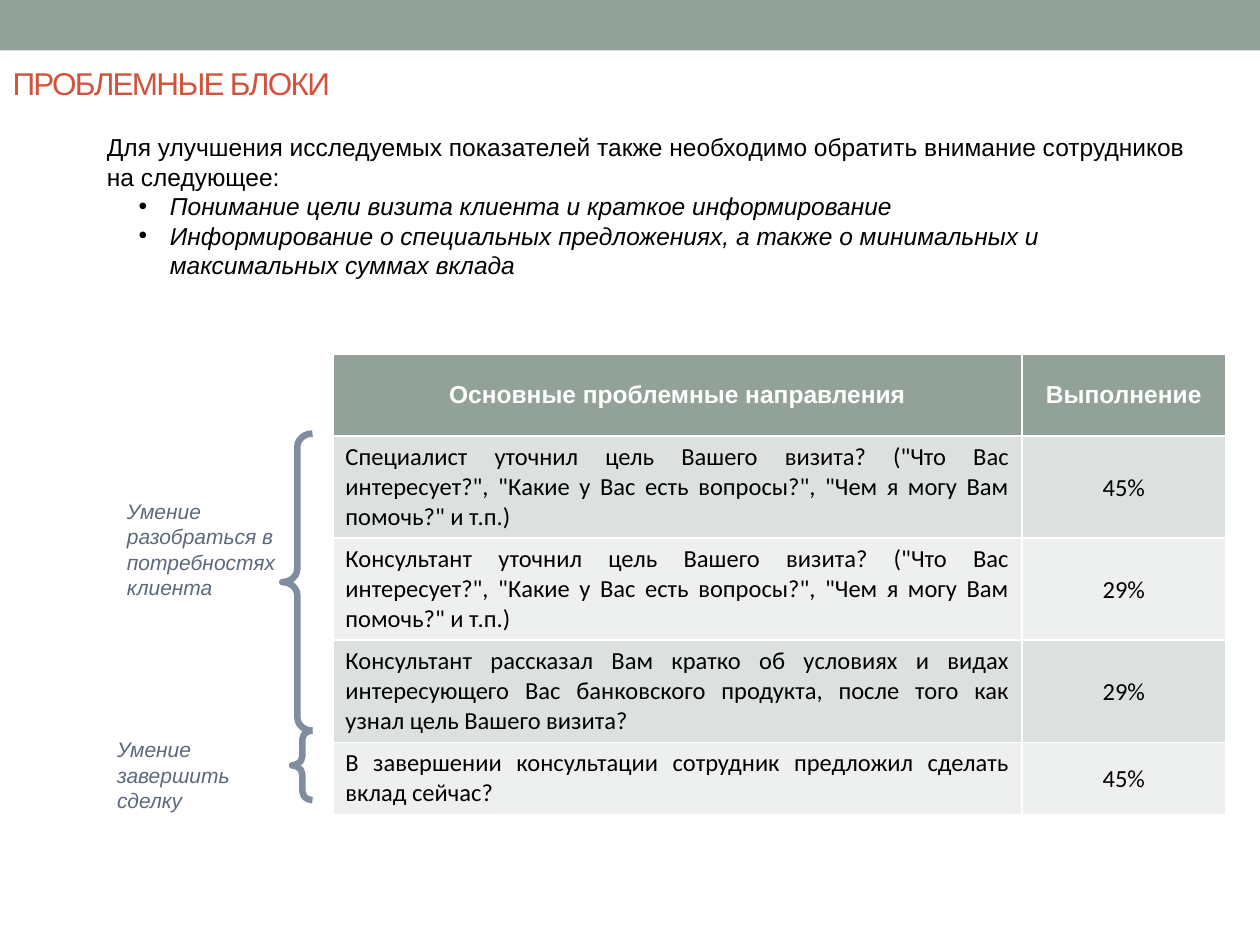
"""Builds the slide on problem areas with a results table and braced groups."""
from pptx import Presentation
from pptx.dml.color import RGBColor
from pptx.enum.shapes import MSO_SHAPE
from pptx.enum.text import MSO_ANCHOR, MSO_AUTO_SIZE, PP_ALIGN
from pptx.oxml.ns import qn
from pptx.util import Cm, Pt

LEFT, CENTER, JUSTIFY = PP_ALIGN.LEFT, PP_ALIGN.CENTER, PP_ALIGN.JUSTIFY
TOP, MIDDLE = MSO_ANCHOR.TOP, MSO_ANCHOR.MIDDLE
NO_FIT = MSO_AUTO_SIZE.NONE
RECTANGLE, LEFT_BRACE = MSO_SHAPE.RECTANGLE, MSO_SHAPE.LEFT_BRACE

SAGE = RGBColor(0x93, 0xA2, 0x99)
BANDS = (RGBColor(0xDC, 0xE0, 0xDE), RGBColor(0xEE, 0xF0, 0xEF))
RED = RGBColor(0xD2, 0x53, 0x3C)
BLACK = RGBColor(0, 0, 0)
WHITE = RGBColor(0xFF, 0xFF, 0xFF)
SLATE = RGBColor(0x5C, 0x69, 0x7C)
BRACE_BLUE = RGBColor(0x80, 0x8D, 0xA0)

HEADING = "ПРОБЛЕМНЫЕ БЛОКИ"
INTRO = ("Для улучшения исследуемых показателей также необходимо "
         "обратить внимание сотрудников на следующее:")
POINTS = [
    "Понимание цели визита клиента и краткое информирование",
    "Информирование о специальных предложениях, а также о минимальных "
    "и максимальных суммах вклада",
]
HEADERS = ("Основные проблемные направления", "Выполнение")
VISIT_QUESTIONS = ('уточнил цель Вашего визита? ("Что Вас интересует?", '
                   '"Какие у Вас есть вопросы?", "Чем я могу Вам помочь?" и т.п.)')
RESULTS = [
    (f"Специалист {VISIT_QUESTIONS}", "45%"),
    (f"Консультант {VISIT_QUESTIONS}", "29%"),
    ("Консультант рассказал Вам кратко об условиях и видах интересующего "
     "Вас банковского продукта, после того как узнал цель Вашего визита?", "29%"),
    ("В завершении консультации сотрудник предложил сделать вклад сейчас?", "45%"),
]
COLUMN_WIDTHS = (13.89, 4.11)
ROW_HEIGHTS = (1.65, 2.03, 2.03, 2.03, 1.43)
GROUPS = [
    {"label": "Умение разобраться в потребностях клиента",
     "label_box": (2.31, 9.93, 3.61, 2.31), "brace_box": (5.69, 8.74, 0.61, 5.99)},
    {"label": "Умение завершить сделку",
     "label_box": (2.11, 14.73, 3.61, 1.8), "brace_box": (5.89, 14.73, 0.41, 1.4)},
]


def box(*lengths):
    return [Cm(length) for length in lengths]


def place(part, *lengths):
    part.left, part.top, part.width, part.height = box(*lengths)


def write(paragraph, text, size=14, font="Arial", color=BLACK, bold=False,
          italic=False, align=LEFT, spacing=None):
    paragraph.alignment = align
    paragraph.space_before = Pt(0)
    run = paragraph.add_run()
    run.text = text
    run.font.size = Pt(size)
    run.font.name = font
    run.font.color.rgb = color
    run.font.bold = bold
    run.font.italic = italic
    if spacing is not None:
        run.font._element.set("spc", str(spacing))


def set_bullet(paragraph, margin, indent, mark=None):
    properties = paragraph._p.get_or_add_pPr()
    properties.set("marL", str(Cm(margin)))
    properties.set("indent", str(Cm(indent)))
    if mark:
        font = properties.makeelement(qn("a:buFont"), {"typeface": "Arial"})
        bullet = properties.makeelement(qn("a:buChar"), {"char": mark})
        properties.extend([font, bullet])
    else:
        properties.append(properties.makeelement(qn("a:buNone"), {}))


def add_heading(slide):
    title = slide.shapes.title
    place(title, 0, 1.12, 16.41, 1.12)
    title.text_frame.auto_size = NO_FIT
    title.text_frame.vertical_anchor = MIDDLE
    write(title.text_frame.paragraphs[0], HEADING, size=18, color=RED, spacing=-100)


def add_points(slide):
    body = slide.placeholders[1]
    place(body, 1.9, 2.54, 22.4, 3.25)
    frame = body.text_frame
    frame.auto_size = NO_FIT
    frame.vertical_anchor = TOP
    write(frame.paragraphs[0], INTRO)
    set_bullet(frame.paragraphs[0], 0, 0)
    for point in POINTS:
        paragraph = frame.add_paragraph()
        paragraph.level = 1
        write(paragraph, point, italic=True)
        set_bullet(paragraph, 1.27, -0.63, "•")


def add_results(slide):
    rows = [HEADERS, *RESULTS]
    area = box(6.71, 7.14, sum(COLUMN_WIDTHS), sum(ROW_HEIGHTS))
    table = slide.shapes.add_table(len(rows), len(HEADERS), *area).table
    for column, width in zip(table.columns, COLUMN_WIDTHS):
        column.width = Cm(width)
    for row, height in zip(table.rows, ROW_HEIGHTS):
        row.height = Cm(height)
    for r, row in enumerate(rows):
        for c, text in enumerate(row):
            cell = table.cell(r, c)
            cell.vertical_anchor = MIDDLE
            cell.fill.solid()
            paragraph = cell.text_frame.paragraphs[0]
            if r == 0:
                cell.fill.fore_color.rgb = SAGE
                write(paragraph, text, color=WHITE, bold=True, align=CENTER)
                continue
            cell.fill.fore_color.rgb = BANDS[(r - 1) % 2]
            write(paragraph, text, font="Calibri", align=CENTER if c else JUSTIFY)
            if c:
                cell.margin_left = cell.margin_top = cell.margin_right = Cm(0.03)
                cell.margin_bottom = 0


def add_group(slide, label, label_box, brace_box):
    brace = slide.shapes.add_shape(LEFT_BRACE, *box(*brace_box))
    brace.adjustments[0] = 0.44
    brace.adjustments[1] = 0.5
    brace.shadow.inherit = False
    brace.fill.background()
    brace.line.color.rgb = BRACE_BLUE
    brace.line.width = Pt(3.75)
    caption = slide.shapes.add_textbox(*box(*label_box)).text_frame
    caption.word_wrap = True
    write(caption.paragraphs[0], label, size=12, color=SLATE, italic=True)


def main():
    deck = Presentation()
    deck.slide_width, deck.slide_height = box(25.4, 19.05)
    slide = deck.slides.add_slide(deck.slide_layouts[1])
    band = slide.shapes.add_shape(RECTANGLE, *box(0, 0, 25.4, 1.02))
    band.shadow.inherit = False
    band.fill.solid()
    band.fill.fore_color.rgb = SAGE
    band.line.fill.background()
    add_heading(slide)
    add_points(slide)
    add_results(slide)
    for group in GROUPS:
        add_group(slide, **group)
    deck.save("out.pptx")


if __name__ == "__main__":
    main()
